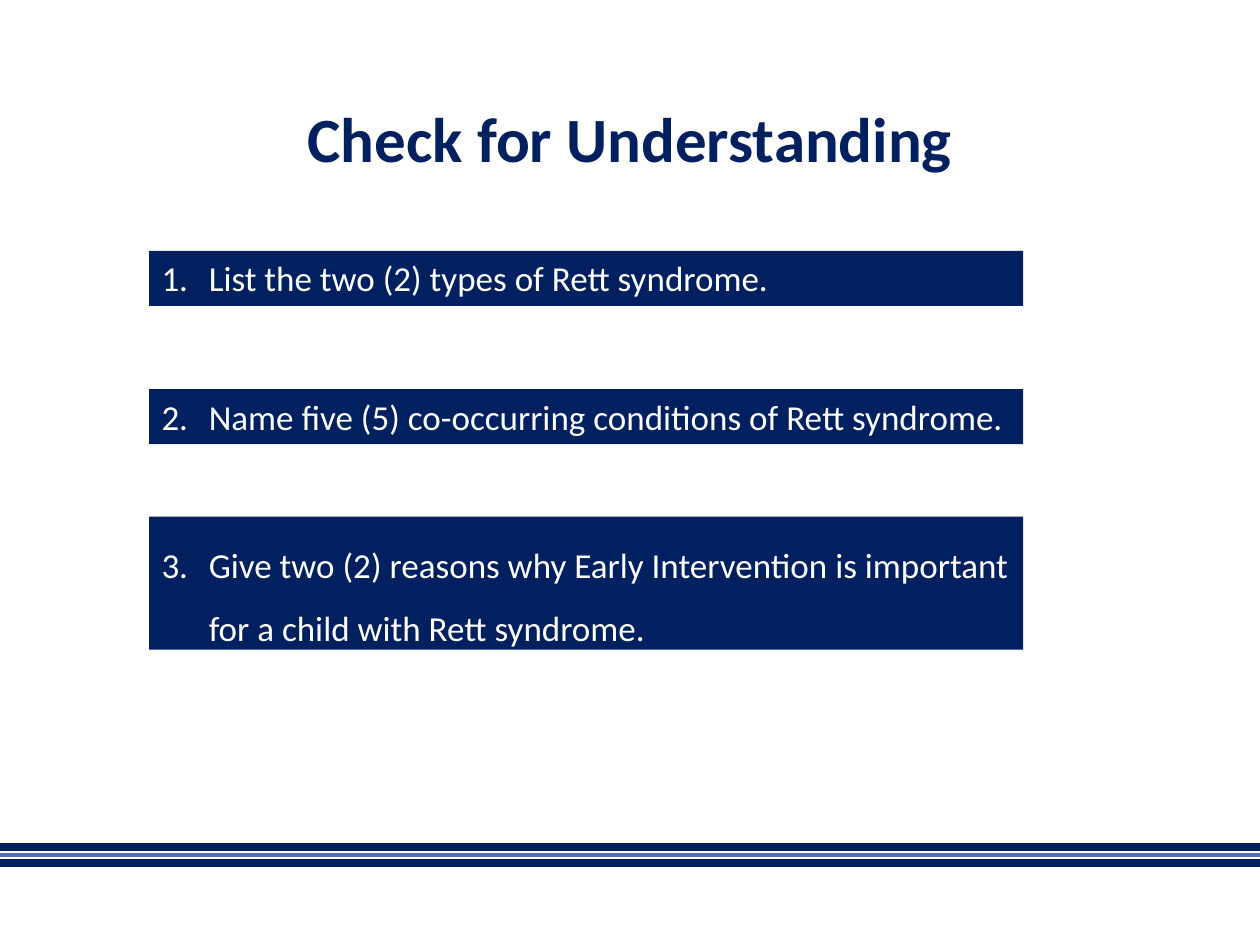
from dataclasses import dataclass

from lxml.etree import SubElement
from pptx import Presentation
from pptx.dml.color import RGBColor as RGB
from pptx.enum.shapes import MSO_CONNECTOR as LINK, MSO_SHAPE as SHAPE
from pptx.enum.text import MSO_ANCHOR as ANCHOR, MSO_AUTO_SIZE as FIT, PP_ALIGN as ALIGN
from pptx.oxml.ns import qn
from pptx.util import Pt


@dataclass
class Theme:
    navy: RGB = RGB(0x00, 0x20, 0x60)
    band: RGB = RGB(0x00, 0x1F, 0x5F)
    steel: RGB = RGB(0x50, 0x70, 0xA7)
    white: RGB = RGB(0xFF, 0xFF, 0xFF)
    font: str = "Calibri"
    head: int = 36
    body: int = 20


theme = Theme()


def style(para, size, color, bold=False):
    for run in para.runs:
        font = run.font
        font.name, font.size, font.bold = theme.font, Pt(size), bold
        font.color.rgb = color


def number(para, start):
    """Number the paragraph from start, with a hanging indent."""
    props = para._p.get_or_add_pPr()
    props.set("marL", str(Pt(27)))
    props.set("indent", str(-Pt(27)))
    SubElement(props, qn("a:buFont"), typeface="+mj-lt")
    SubElement(props, qn("a:buAutoNum"), type="arabicPeriod", startAt=str(start))


deck = Presentation()
deck.slide_width, deck.slide_height = Pt(720), Pt(540)
slide = deck.slides.add_slide(deck.slide_layouts[5])
shapes = slide.shapes

# Footer stripes
for y, width, color in [
    (484, 4.5, theme.band),
    (488.5, 2.25, theme.steel),
    (493, 4.5, theme.band),
]:
    stripe = shapes.add_connector(LINK.STRAIGHT, 0, Pt(y), Pt(720), Pt(y))
    stripe.line.width = Pt(width)
    stripe.line.color.rgb = color
    SubElement(stripe._element.spPr, qn("a:effectLst"))

# Title
title = shapes.title
title.left, title.top, title.width, title.height = Pt(49.5), Pt(28.75), Pt(621), Pt(104.4)
frame = title.text_frame
frame.text = "Check for Understanding"
frame.auto_size = FIT.NONE
frame.vertical_anchor = ANCHOR.MIDDLE
para = frame.paragraphs[0]
para.alignment = ALIGN.CENTER
para.line_spacing = 0.9
style(para, theme.head, theme.navy, bold=True)

# Questions: top, height, line spacing, wording
tasks = [
    (143.3, 31.5, 1.0, "List the two (2) types of Rett syndrome."),
    (222.3, 31.5, 1.0, "Name five (5) co-occurring conditions of Rett syndrome."),
    (295.2, 76, 1.5, "Give two (2) reasons why Early Intervention is important "
                     "for a child with Rett syndrome."),
]
for count, (top, height, space, text) in enumerate(tasks, 1):
    box = shapes.add_shape(SHAPE.RECTANGLE, Pt(85.2), Pt(top), Pt(499.5), Pt(height))
    box.shadow.inherit = False
    box.fill.solid()
    box.fill.fore_color.rgb = theme.navy
    box.line.fill.background()
    frame = box.text_frame
    frame.text = text
    frame.word_wrap = True
    frame.auto_size = FIT.SHAPE_TO_FIT_TEXT
    frame.vertical_anchor = ANCHOR.TOP
    para = frame.paragraphs[0]
    para.alignment = ALIGN.LEFT
    para.line_spacing = space
    number(para, count)
    style(para, theme.body, theme.white)

deck.save("out.pptx")
